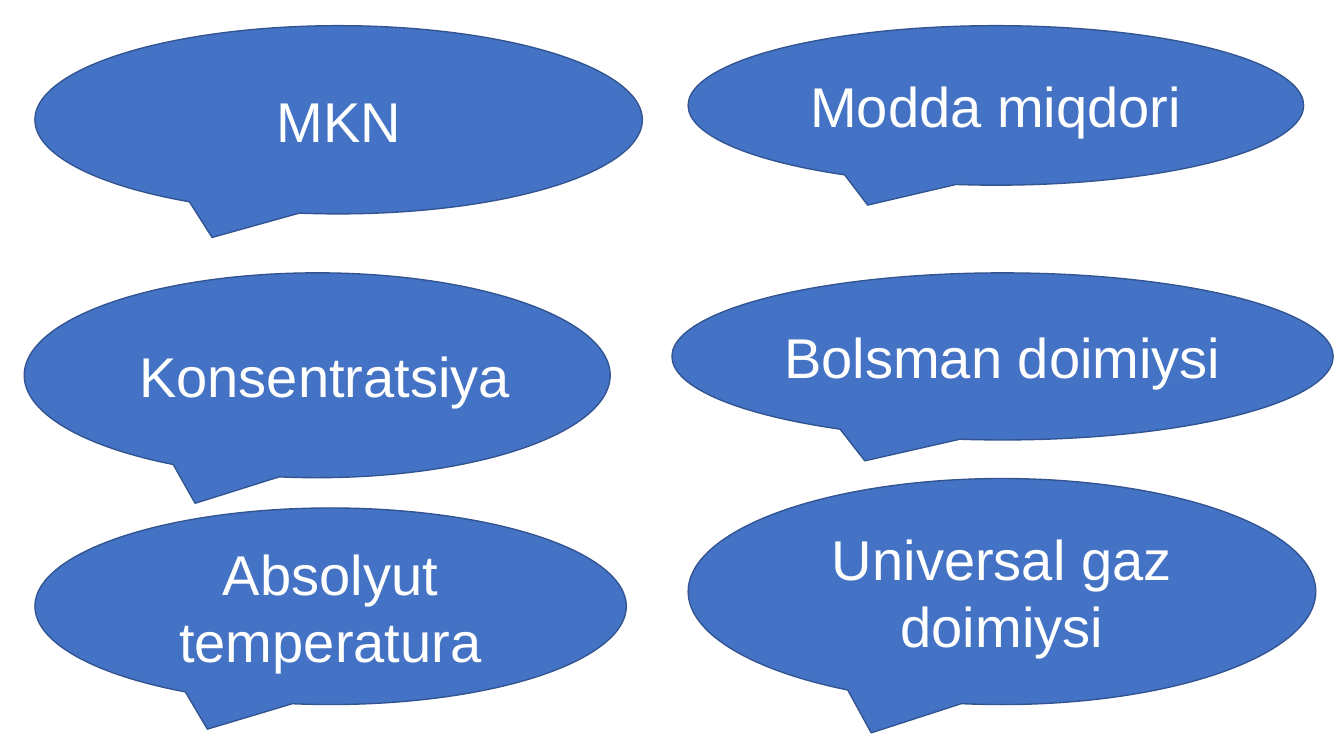
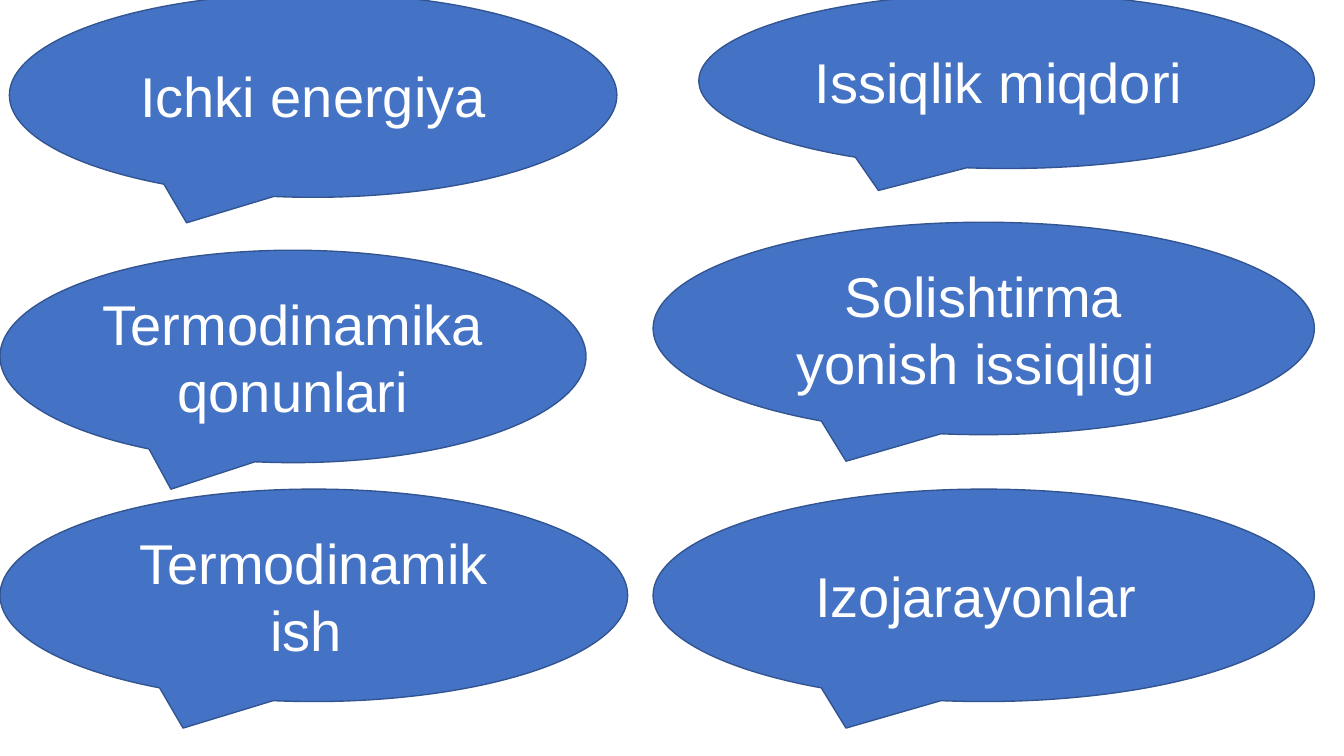
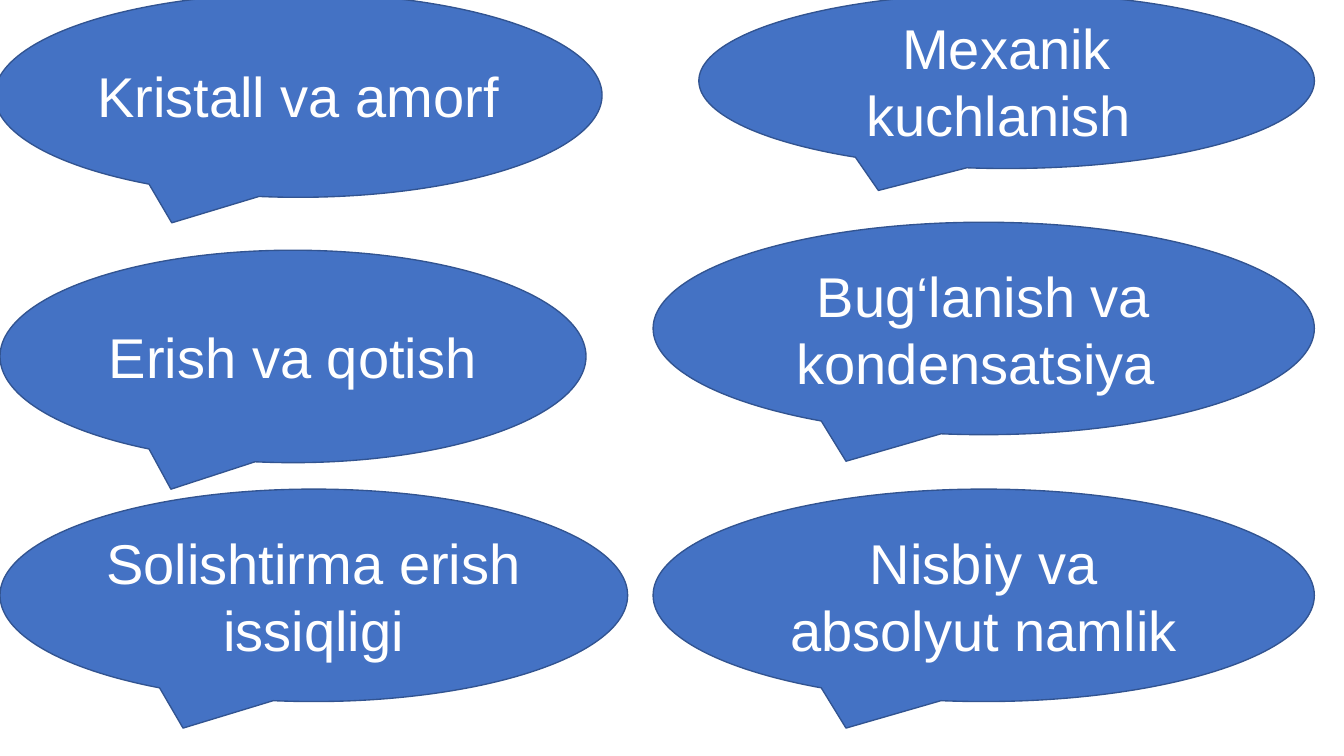
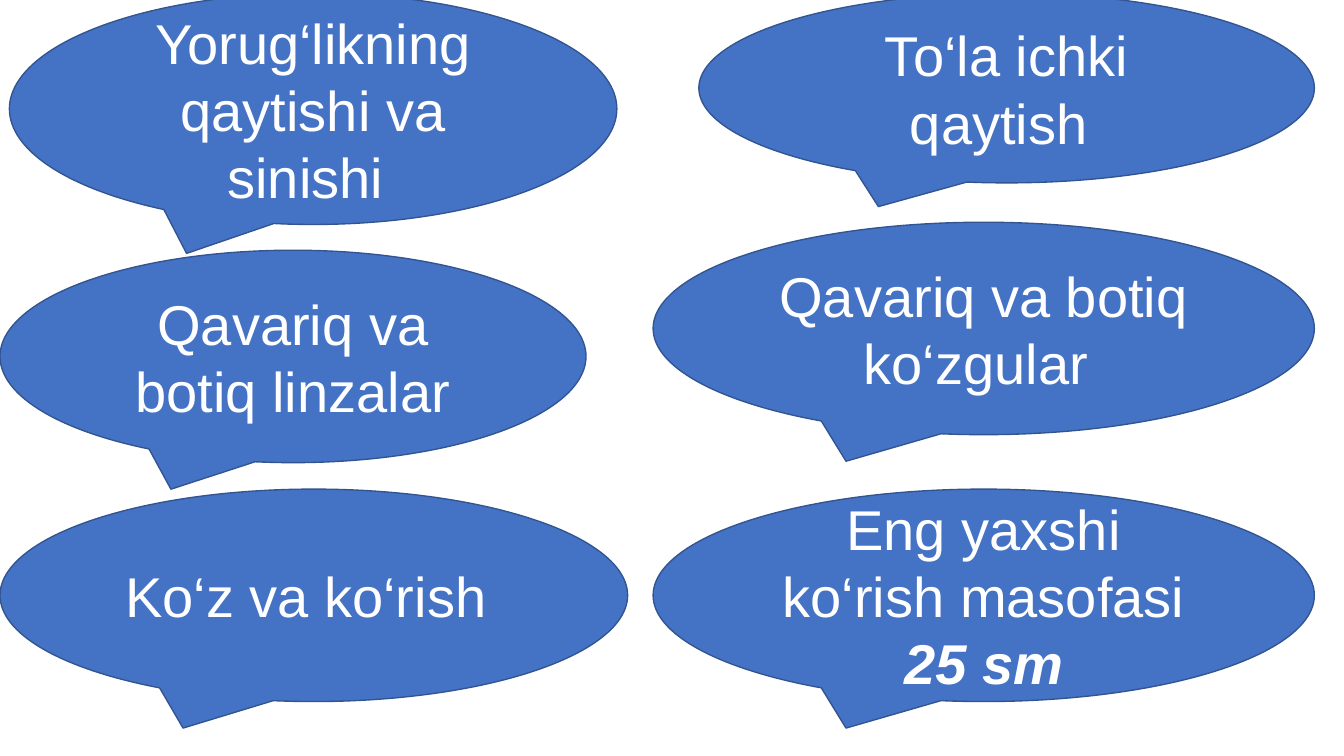
from pptx import Presentation
from pptx.dml.color import RGBColor
from pptx.enum.shapes import MSO_SHAPE
from pptx.enum.text import MSO_ANCHOR, PP_ALIGN
from pptx.util import Inches, Pt

BUBBLE = MSO_SHAPE.OVAL_CALLOUT
MIDDLE = MSO_ANCHOR.MIDDLE
CENTER = PP_ALIGN.CENTER

# Shared style
BLUE = RGBColor(0x44, 0x72, 0xC4)
DARK_BLUE = RGBColor(0x32, 0x54, 0x91)
WHITE = RGBColor(0xFF, 0xFF, 0xFF)
FONT_NAME = "Arial"
FONT_SIZE = Pt(41)
LINE_WIDTH = Pt(1)
BLANK_LAYOUT = 6

# Terms per slide, row by row; a tuple holds a term and its emphasised value
GAS_TERMS = [
    "MKN", "Modda miqdori",
    " Konsentratsiya", "Bolsman doimiysi ",
    "Absolyut temperatura", "Universal gaz doimiysi",
]
HEAT_TERMS = [
    "Ichki energiya", "Issiqlik miqdori ",
    "Termodinamika\vqonunlari", "Solishtirma yonish issiqligi ",
    "Termodinamik ish ", "Izojarayonlar ",
]
MATTER_TERMS = [
    "Kristall va amorf ", "Mexanik kuchlanish ",
    "Erish va qotish", "Bug‘lanish va kondensatsiya ",
    "Solishtirma erish issiqligi", "Nisbiy va absolyut namlik",
]
OPTICS_TERMS = [
    "Yorug‘likning qaytishi va sinishi ", "To‘la ichki qaytish ",
    "Qavariq va botiq linzalar", "Qavariq va botiq ko‘zgular ",
    "Ko‘z va ko‘rish ", ("Eng yaxshi ko‘rish masofasi ", "25 sm"),
]

# Bubble frames: left, top, width, height in percent of the slide
GAS_FRAMES = [
    (2.6, 3.4, 45.2, 24.9), (51.2, 3.4, 45.8, 21.1),
    (1.8, 36.1, 43.6, 27.1), (50, 36.1, 49.2, 22.1),
    (2.6, 67.2, 44, 26), (51.2, 63.3, 46.7, 29.9),
]
LOWER_FRAMES = [
    (0, 33.1, 43.6, 28.1), (48.6, 29.4, 49.2, 28.1),
    (0, 64.7, 46.7, 28.1), (48.6, 64.7, 49.2, 28.1),
]


def frames_with_top_row(first_left, first_height, second_height):
    """Frames whose top row varies while the two lower rows stay fixed."""
    return [
        (first_left, -0.9, 45.2, first_height),
        (52, -0.9, 45.8, second_height),
    ] + LOWER_FRAMES


SLIDES = [
    (GAS_TERMS, GAS_FRAMES),
    (HEAT_TERMS, frames_with_top_row(0.7, 27, 23.2)),
    (MATTER_TERMS, frames_with_top_row(-0.4, 27, 23.2)),
    (OPTICS_TERMS, frames_with_top_row(0.7, 30.6, 25.1)),
]

presentation = Presentation()
presentation.slide_width = Inches(13.65)
presentation.slide_height = Inches(7.68)


def add_bubble(slide, term, frame):
    sides = (presentation.slide_width, presentation.slide_height) * 2
    bounds = [round(side * share / 100) for side, share in zip(sides, frame)]
    shape = slide.shapes.add_shape(BUBBLE, *bounds)
    shape.shadow.inherit = False
    shape.fill.solid()
    shape.fill.fore_color.rgb = BLUE
    shape.line.color.rgb = DARK_BLUE
    shape.line.width = LINE_WIDTH

    # Term, followed by its value where there is one
    text_frame = shape.text_frame
    text_frame.word_wrap = True
    text_frame.vertical_anchor = MIDDLE
    paragraph = text_frame.paragraphs[0]
    paragraph.alignment = CENTER
    paragraph.font.name = FONT_NAME
    paragraph.font.size = FONT_SIZE
    paragraph.font.color.rgb = WHITE
    if isinstance(term, tuple):
        paragraph.text, value = term
        run = paragraph.add_run()
        run.text = value
        run.font.bold = run.font.italic = True
    else:
        paragraph.text = term


# Build the slides
for terms, frames in SLIDES:
    slide = presentation.slides.add_slide(
        presentation.slide_layouts[BLANK_LAYOUT])
    for term, frame in zip(terms, frames):
        add_bubble(slide, term, frame)

presentation.save("out.pptx")
